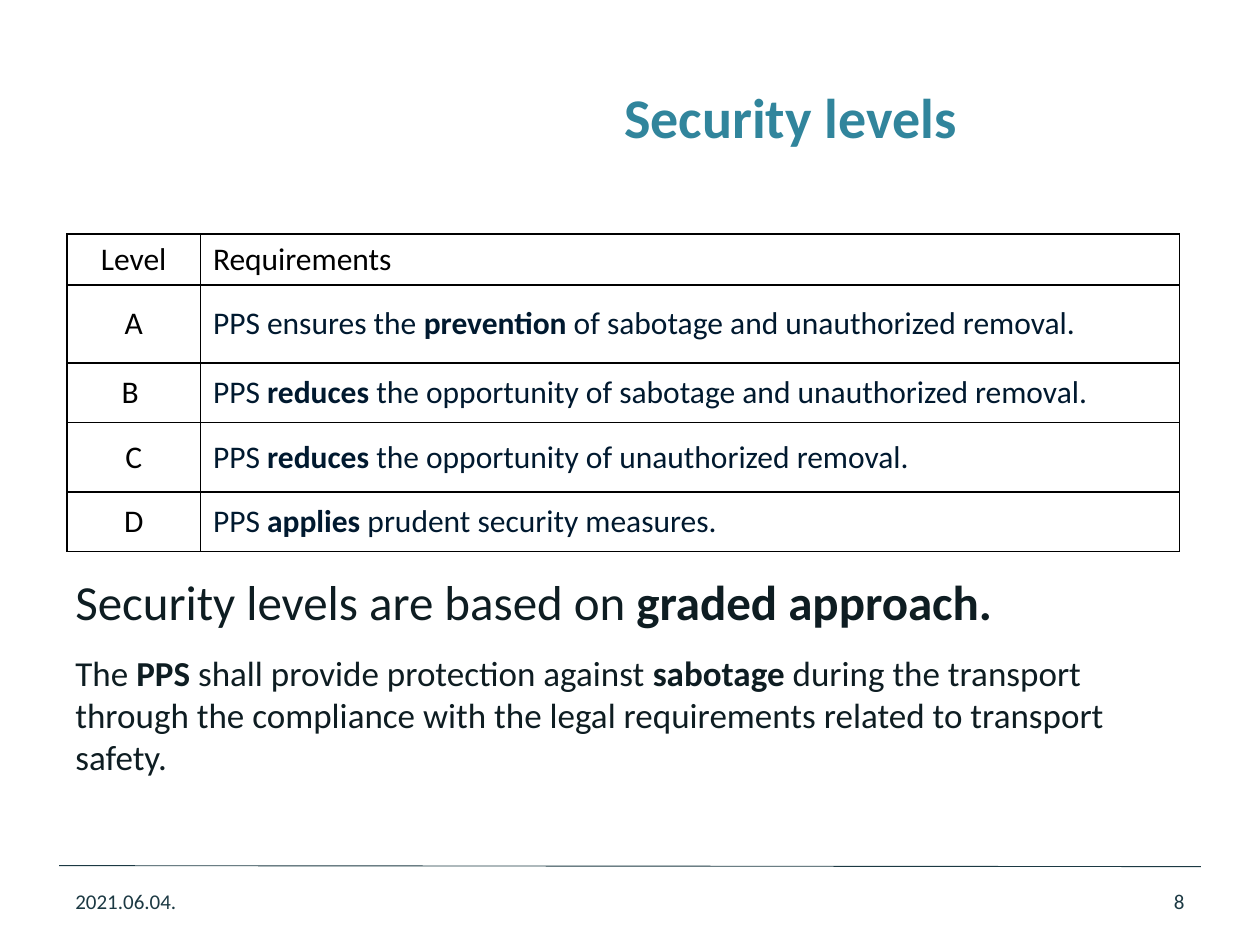
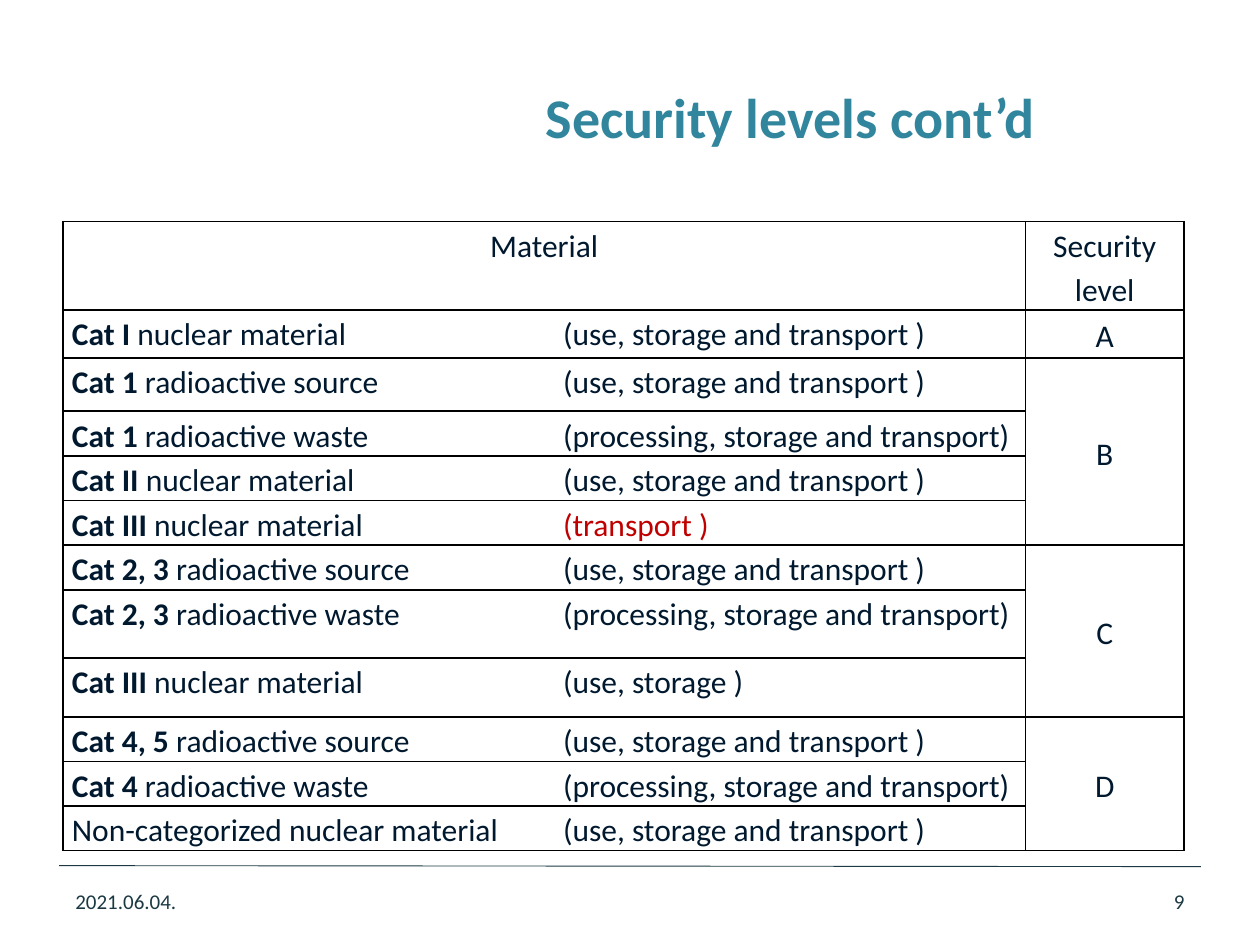
from lxml.etree import SubElement
from pptx import Presentation
from pptx.dml.color import RGBColor
from pptx.enum.shapes import MSO_CONNECTOR
from pptx.enum.text import MSO_ANCHOR, PP_ALIGN
from pptx.oxml.ns import qn
from pptx.util import Cm, Pt

COLORS = {
    "title": "31859C",
    "footer": "1C3943",
    "body": "0E1D22",
    "cell": "00192F",
    "black": "000000",
    "white": "FFFFFF",
    "red": "C00000",
}
FONT = "Calibri"
LEFT, CENTER, RIGHT = PP_ALIGN.LEFT, PP_ALIGN.CENTER, PP_ALIGN.RIGHT


def add_runs(paragraph, runs, size, color, align=LEFT):
    paragraph.alignment = align
    for text, bold, *own_color in runs:
        run = paragraph.add_run()
        run.text = text
        run.font.name = FONT
        run.font.size = Pt(size)
        run.font.bold = bold
        name = own_color[0] if own_color else color
        run.font.color.rgb = RGBColor.from_string(COLORS[name])


def style_cell(cell, anchor, top=1, bottom=1):
    cell.vertical_anchor = anchor
    properties = cell._tc.get_or_add_tcPr()
    for side, width in (("L", 1), ("R", 1), ("T", top), ("B", bottom)):
        line = SubElement(properties, qn(f"a:ln{side}"), w=str(Pt(width)))
        fill = SubElement(line, qn("a:solidFill"))
        SubElement(fill, qn("a:srgbClr"), val=COLORS["black"])
    cell.fill.solid()
    cell.fill.fore_color.rgb = RGBColor.from_string(COLORS["white"])


presentation = Presentation()
presentation.slide_width = Cm(25.4)
presentation.slide_height = Cm(19.05)

slides = []
for title, number in (("Security levels", "8"), ("Security levels cont’d", "9")):
    slide = presentation.slides.add_slide(presentation.slide_layouts[6])
    slides.append(slide)

    rule = slide.shapes.add_connector(
        MSO_CONNECTOR.STRAIGHT, Cm(1.19), Cm(17.45), Cm(24.21), Cm(17.47)
    )
    rule.line.color.rgb = RGBColor.from_string(COLORS["footer"])
    rule.line.width = Pt(0.5)
    SubElement(rule._element.spPr, qn("a:effectLst"))

    for text, left, top, width, height, size, bold, color, align in (
        (title, 7.75, 0.76, 16.38, 3.18, 32, True, "title", CENTER),
        ("2021.06.04.", 1.27, 17.65, 5.92, 1.02, 12, False, "footer", LEFT),
        (number, 18.21, 17.65, 5.92, 1.02, 12, False, "footer", RIGHT),
    ):
        box = slide.shapes.add_textbox(Cm(left), Cm(top), Cm(width), Cm(height))
        frame = box.text_frame
        frame.word_wrap = True
        frame.vertical_anchor = MSO_ANCHOR.MIDDLE
        add_runs(frame.paragraphs[0], [(text, bold)], size, color, align)

levels_slide, materials_slide = slides

requirements = [
    ("Level", [("Requirements", False, "black")]),
    ("A", [("PPS ensures the ", False), ("prevention", True),
           (" of sabotage and unauthorized removal.", False)]),
    ("B ", [("PPS ", False), ("reduces", True),
            (" the opportunity of sabotage and unauthorized removal.", False)]),
    ("C", [("PPS ", False), ("reduces", True),
           (" the opportunity of unauthorized removal.", False)]),
    ("D", [("PPS ", False), ("applies", True),
           (" prudent security measures.", False)]),
]
requirement_heights = [1.03, 1.57, 1.2, 1.4, 1.2]
table = levels_slide.shapes.add_table(
    len(requirements), 2, Cm(1.35), Cm(4.72), Cm(22.43), Cm(sum(requirement_heights))
).table
table.first_row = table.horz_banding = False
table.columns[0].width = Cm(2.69)
table.columns[1].width = Cm(19.74)
for row, (level, requirement) in enumerate(requirements):
    table.rows[row].height = Cm(requirement_heights[row])
    anchor = MSO_ANCHOR.MIDDLE if row else MSO_ANCHOR.TOP
    level_cell, requirement_cell = table.cell(row, 0), table.cell(row, 1)
    style_cell(level_cell, anchor)
    style_cell(requirement_cell, anchor)
    add_runs(level_cell.text_frame.paragraphs[0], [(level, False)], 18, "black", CENTER)
    add_runs(requirement_cell.text_frame.paragraphs[0], requirement, 18, "cell")

summary = levels_slide.shapes.add_textbox(Cm(1.27), Cm(11.4), Cm(22.86), Cm(5.6)).text_frame
summary.word_wrap = True
add_runs(
    summary.paragraphs[0],
    [("Security levels are based on ", False), ("graded approach.", True)],
    28, "body",
)
paragraph = summary.add_paragraph()
paragraph.space_before = Pt(12)
add_runs(
    paragraph,
    [
        ("The ", False),
        ("PPS", True),
        (" shall provide protection against ", False),
        ("sabotage", True),
        (" during the transport through the compliance with the legal "
         "requirements related to transport safety.", False),
    ],
    20, "body",
)

USE = "(use, storage and transport )"
PROCESSING = "(processing, storage and transport)"
materials = [
    ("Cat I", " nuclear material", USE, "cell", 0.97),
    ("Cat 1", " radioactive source", USE, "cell", 1.07),
    ("Cat 1", " radioactive waste", PROCESSING, "cell", 0.9),
    ("Cat II", " nuclear material", USE, "cell", 0.9),
    ("Cat III", " nuclear material", "(transport )", "red", 0.9),
    ("Cat 2, 3 ", "radioactive source", USE, "cell", 0.9),
    ("Cat 2, 3 ", "radioactive waste", PROCESSING, "cell", 1.37),
    ("Cat III ", "nuclear material", "(use, storage )", "cell", 1.19),
    ("Cat 4, 5 ", "radioactive source", USE, "cell", 0.9),
    ("Cat 4 ", "radioactive waste", PROCESSING, "cell", 0.9),
    ("", "Non-categorized nuclear material", USE, "cell", 0.9),
]
level_groups = [("A", 1, 1), ("B", 2, 5), ("C", 6, 8), ("D", 9, 11)]
thick_below = [{0, 1, 8}, {0, 1, 5, 8}]
material_heights = [1.78] + [material[-1] for material in materials]

table = materials_slide.shapes.add_table(
    len(material_heights), 2, Cm(1.27), Cm(4.47), Cm(22.6), Cm(sum(material_heights))
).table
table.first_row = table.horz_banding = False
table.columns[0].width = Cm(19.4)
table.columns[1].width = Cm(3.2)

contents = {
    (0, 0): [("Material", False)],
    (0, 1): [("Security level", False)],
}
for row, (category, material, activity, color, height) in enumerate(materials, 1):
    contents[row, 0] = [(category, True)] if category else []
    contents[row, 0] += [(material + "\t", False), (activity, False, color)]
for level, first, last in level_groups:
    contents[first, 1] = [(level, False)]
    if last > first:
        table.cell(first, 1).merge(table.cell(last, 1))

for row, height in enumerate(material_heights):
    table.rows[row].height = Cm(height)
    for column in range(2):
        cell = table.cell(row, column)
        cell.margin_left = cell.margin_right = Cm(0.18)
        cell.margin_top = cell.margin_bottom = 0
        thick = thick_below[column]
        style_cell(
            cell,
            MSO_ANCHOR.MIDDLE if row and column else MSO_ANCHOR.TOP,
            top=1.5 if row - 1 in thick else 1,
            bottom=1.5 if row in thick else 1,
        )
        if (row, column) not in contents:
            continue
        paragraph = cell.text_frame.paragraphs[0]
        paragraph.line_spacing = 1.15
        paragraph.space_after = Pt(6)
        if row and not column:
            tabs = SubElement(paragraph._p.get_or_add_pPr(), qn("a:tabLst"))
            SubElement(tabs, qn("a:tab"), pos=str(Cm(9.9)), algn="l")
        align = LEFT if row and not column else CENTER
        add_runs(paragraph, contents[row, column], 18, "cell", align)

presentation.save("out.pptx")
